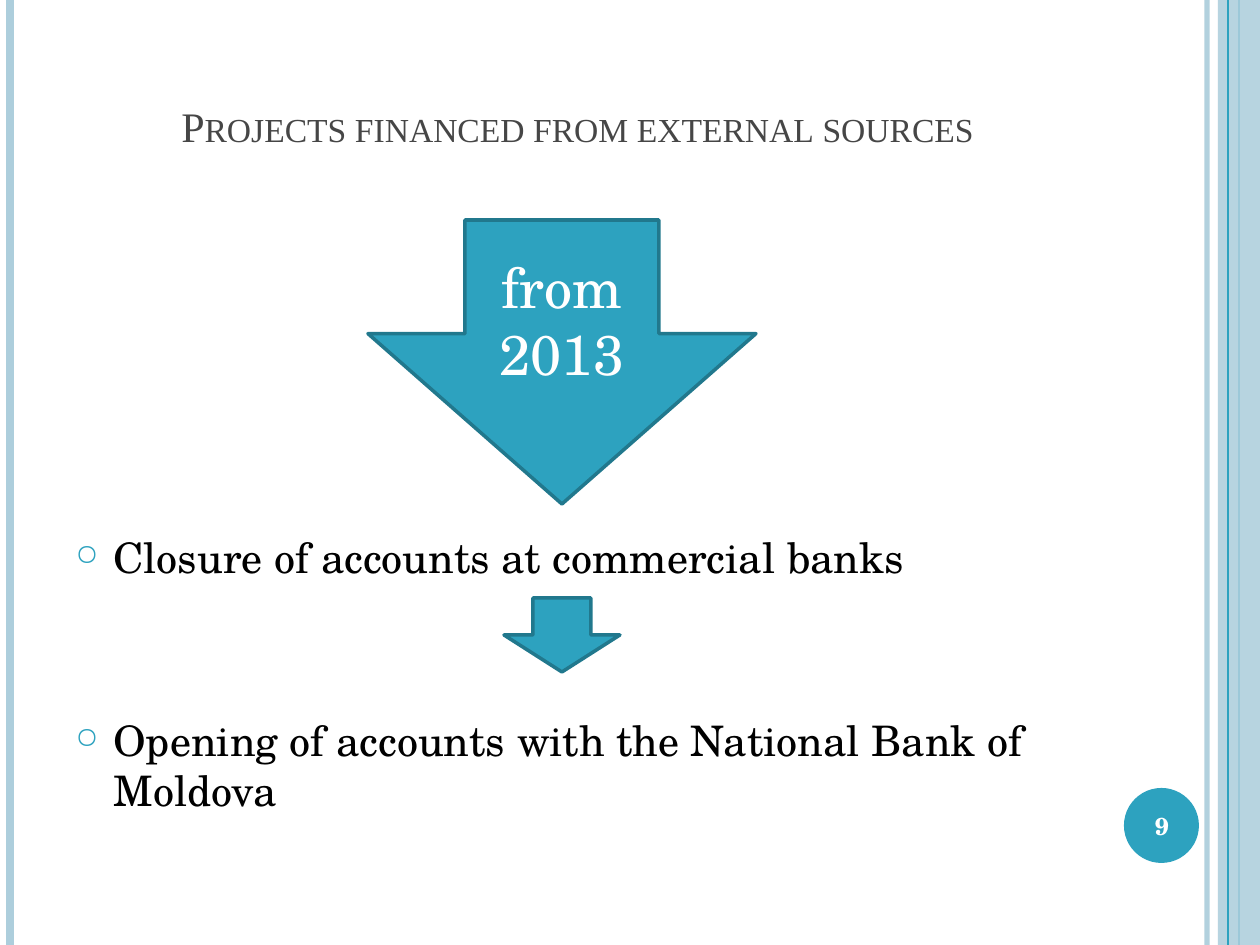
"""Build the slide on projects financed from external sources."""
from lxml.etree import SubElement
from pptx import Presentation
from pptx.dml.color import RGBColor
from pptx.enum.shapes import MSO_CONNECTOR, MSO_SHAPE
from pptx.enum.text import MSO_ANCHOR, PP_ALIGN
from pptx.oxml.ns import qn
from pptx.util import Pt

SCALE = 914400 / 126
WIDTH, HEIGHT = 1260, 945
SERIF, SCHOOL = "Times New Roman", "TeX Gyre Schola"
COLORS = {
    "accent": "2DA2BF",
    "edge": "21788D",
    "pale": "ADCEDC",
    "title": "464646",
    "body": "000000",
    "white": "FFFFFF",
}


def px(*lengths):
    return [round(length * SCALE) for length in lengths]


def color(name):
    return RGBColor.from_string(COLORS[name])


def set_alpha(shape, percent):
    tint = shape.element.spPr.find(".//" + qn("a:srgbClr"))
    SubElement(tint, qn("a:alpha"), val=str(percent * 1000))


def add_stripe(slide, x, tone, weight, alpha=None):
    stripe = slide.shapes.add_connector(MSO_CONNECTOR.STRAIGHT, *px(x, 0, x, HEIGHT))
    stripe.line.color.rgb = color(tone)
    stripe.line.width = Pt(weight)
    if alpha:
        set_alpha(stripe, alpha)
    SubElement(stripe.element.spPr, qn("a:effectLst"))


def add_solid(slide, kind, box, tone, edge=None, alpha=None):
    solid = slide.shapes.add_shape(kind, *px(*box))
    solid.shadow.inherit = False
    solid.fill.solid()
    solid.fill.fore_color.rgb = color(tone)
    if alpha:
        set_alpha(solid, alpha)
    if edge:
        solid.line.color.rgb = color(edge)
        solid.line.width = Pt(2)
    else:
        solid.line.fill.background()
    return solid


def write(paragraph, words, tone, **formats):
    run = paragraph.add_run()
    run.text = words
    run.font.color.rgb = color(tone)
    for key, value in formats.items():
        setattr(run.font, key, value)
    return run


def add_label(slide, box, anchor, words, tone, **formats):
    frame = slide.shapes.add_textbox(*px(*box)).text_frame
    frame.word_wrap = True
    frame.vertical_anchor = anchor
    frame.paragraphs[0].alignment = PP_ALIGN.CENTER
    return write(frame.paragraphs[0], words, tone, **formats)


def add_bullet(paragraph):
    indent = px(38)[0]
    props = paragraph._p.get_or_add_pPr()
    props.set("marL", str(indent))
    props.set("indent", str(-indent))
    SubElement(SubElement(props, qn("a:buClr")), qn("a:srgbClr"), val=COLORS["accent"])
    SubElement(props, qn("a:buSzPct"), val="70000")
    SubElement(props, qn("a:buChar"), char="○")


def add_steps(slide, box, steps, gap):
    frame = slide.shapes.add_textbox(*px(*box)).text_frame
    frame.word_wrap = True
    for index, step in enumerate(steps):
        paragraph = frame.add_paragraph() if index else frame.paragraphs[0]
        if index:
            paragraph.space_before = Pt(gap)
        add_bullet(paragraph)
        write(paragraph, step, "body", name=SCHOOL, size=Pt(24))


def add_frame(slide):
    add_stripe(slide, 1207, "pale", 3, alpha=93)
    add_stripe(slide, 10, "pale", 4.5)
    add_stripe(slide, 1239, "accent", 1.5)
    add_solid(slide, MSO_SHAPE.RECTANGLE, (1218, 0, 42, HEIGHT), "pale", alpha=87)
    add_stripe(slide, 1228, "accent", 0.75)
    add_solid(slide, MSO_SHAPE.OVAL, (1124, 788, 75, 75), "accent")


def add_arrow(slide, box, head=0.5, words=None):
    arrow = add_solid(slide, MSO_SHAPE.DOWN_ARROW, box, "accent", edge="edge")
    arrow.adjustments[1] = head
    if words:
        frame = arrow.text_frame
        frame.word_wrap = True
        frame.vertical_anchor = MSO_ANCHOR.MIDDLE
        frame.paragraphs[0].alignment = PP_ALIGN.CENTER
        write(frame.paragraphs[0], words, "white", name=SCHOOL, size=Pt(32))


def main():
    deck = Presentation()
    deck.slide_width, deck.slide_height = px(WIDTH, HEIGHT)
    slide = deck.slides.add_slide(deck.slide_layouts[6])
    add_frame(slide)
    title = add_label(slide, (63, 38, 1029, 119), MSO_ANCHOR.BOTTOM,
                      "Projects financed from external sources", "title",
                      name=SERIF, size=Pt(24))
    title.font._element.set("cap", "small")
    add_steps(slide, (63, 525, 1134, 367),
              ["Closure of accounts at commercial banks",
               "Opening of accounts with the National Bank of Moldova"], gap=76)
    add_label(slide, (1120, 790, 84, 72), MSO_ANCHOR.MIDDLE, "9", "white",
              name=SCHOOL, size=Pt(14), bold=True)
    add_arrow(slide, (368, 220, 388, 284), head=0.6, words="from 2013")
    add_arrow(slide, (504, 598, 116, 74))
    deck.save("out.pptx")


if __name__ == "__main__":
    main()
